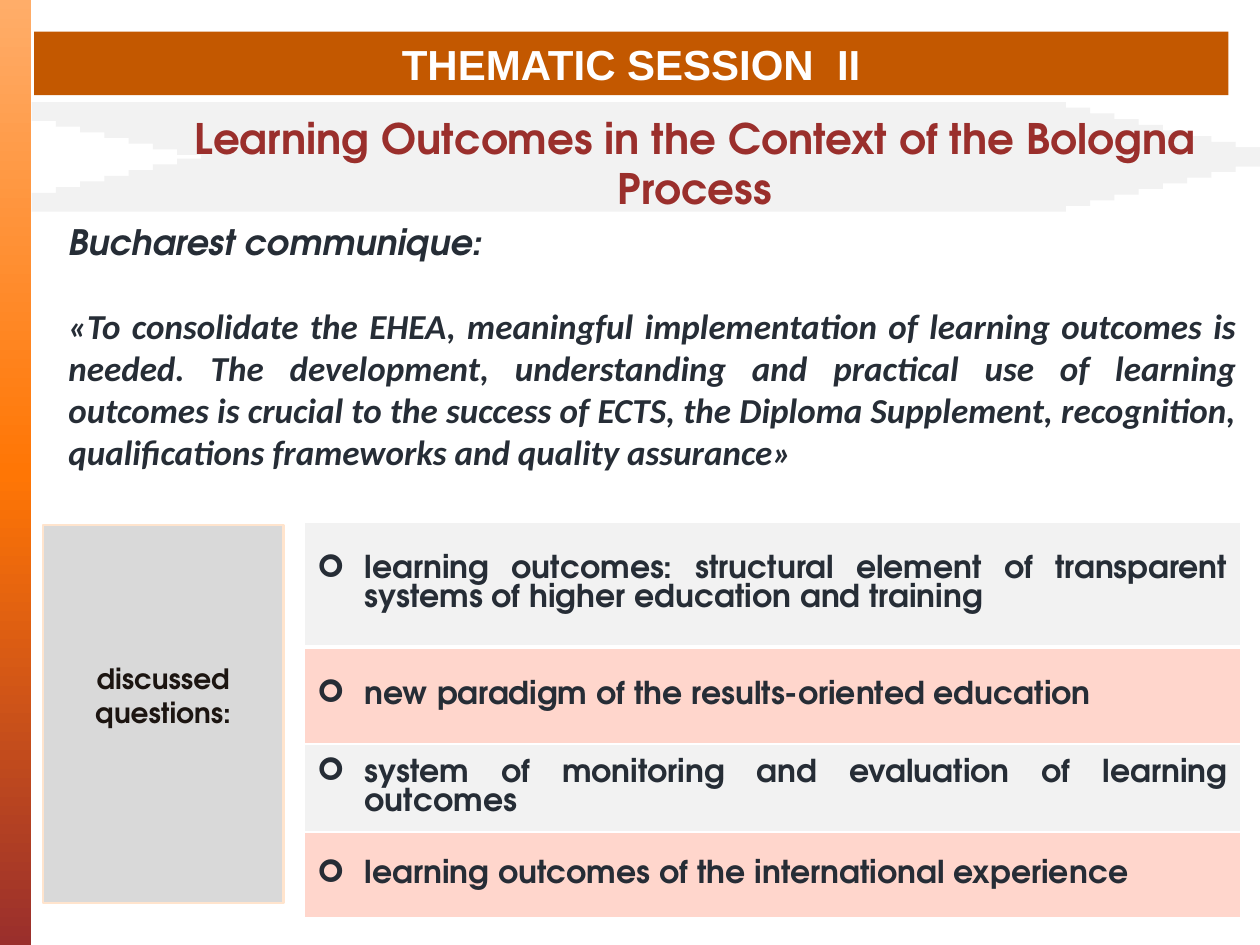
from copy import deepcopy
from dataclasses import dataclass

from lxml import etree
from pptx import Presentation, util as u
from pptx.dml.color import RGBColor
from pptx.enum import shapes, text
from pptx.oxml.ns import qn


@dataclass(frozen=True)
class Theme:
    display: str = "TeX Gyre Adventor"
    body: str = "Calibri"
    banner: str = "Arial"
    bullet: str = "Wingdings"
    white: str = "FFFFFF"
    orange: str = "C35800"
    red: str = "9A2F2C"
    ink: str = "262D36"
    label_ink: str = "1C1511"
    pale: str = "F2F2F2"
    pink: str = "FFD6CC"
    grey: str = "D9D9D9"
    peach: str = "FFE4CD"
    stripe: tuple = ((0, "FFAD69"), (0.5, "FF7605"), (1, "9A2F2C"))
    title_size: int = 24
    quote_size: int = 20
    item_size: int = 18
    label_size: int = 16


theme = Theme()
prs = Presentation()
prs.slide_width, prs.slide_height = u.Inches(10), u.Inches(7.5)
slide = prs.slides.add_slide(prs.slide_layouts[6])
COL, ROW = prs.slide_width / 40, prs.slide_height / 30


def block(col, row, cols, rows, color=None):
    """Add a rectangle in grid units, or a text box when no color is given."""
    area = [int(v) for v in (col * COL, row * ROW, cols * COL, rows * ROW)]
    if color is None:
        shape = slide.shapes.add_textbox(*area)
    else:
        shape = slide.shapes.add_shape(shapes.MSO_SHAPE.RECTANGLE, *area)
        shape.shadow.inherit = False
        shape.fill.solid()
        shape.fill.fore_color.rgb = RGBColor.from_string(color)
        shape.line.fill.background()
    shape.text_frame.word_wrap = True
    return shape


def write(paragraph, words, face, size, color, align, italic=False):
    paragraph.text = words
    paragraph.alignment = align
    font = paragraph.font
    font.name, font.size, font.bold, font.italic = face, u.Pt(size), True, italic
    font.color.rgb = RGBColor.from_string(color)


CENTER, JUSTIFY = text.PP_ALIGN.CENTER, text.PP_ALIGN.JUSTIFY

# Gradient stripe along the left edge
stripe = block(0, 0, 1, 30, theme.orange)
stripe.fill.gradient()
stripe.fill.gradient_angle = 270
stop_list = stripe._element.spPr.find(qn("a:gradFill")).find(qn("a:gsLst"))
stop_list.insert(1, deepcopy(stop_list[0]))
for stop, (position, color) in zip(stripe.fill.gradient_stops, theme.stripe):
    stop.position = position
    stop.color.rgb = RGBColor.from_string(color)

# Session banner
banner = block(1.08, 1, 37.92, 2.02, theme.orange)
banner.text_frame.vertical_anchor = text.MSO_ANCHOR.MIDDLE
write(banner.text_frame.paragraphs[0], "THEMATIC SESSION  II", theme.banner,
      theme.title_size, theme.white, CENTER)

# Stepped arrow: bars close in from above and below towards the tip
for step in range(9):
    for top in (3.24 + 0.18 * step, 6.12 - 0.18 * step):
        block(1 + 0.77 * step, top, 32.84, 0.6, theme.pale)

title = block(4.1, 3.36, 35.92, 5.24)
write(title.text_frame.paragraphs[0],
      "Learning Outcomes in the Context of the Bologna Process",
      theme.display, theme.title_size, theme.red, CENTER)

# Communique quotation
communique = block(1.78, 6.8, 37.88, 9.84).text_frame
source = communique.paragraphs[0]
write(source, "Bucharest communique:", theme.display, theme.quote_size,
      theme.ink, JUSTIFY, italic=True)
source.space_after = u.Pt(24)
write(communique.add_paragraph(),
      "«To consolidate the EHEA, meaningful implementation of learning outcomes is "
      "needed. The development, understanding and practical use of learning outcomes "
      "is crucial to the success of ECTS, the Diploma Supplement, recognition, "
      "qualifications frameworks and quality assurance»",
      theme.body, theme.quote_size, theme.ink, JUSTIFY, italic=True)

# Discussed questions, one table row each: words and height in grid rows
questions = [
    ("learning outcomes: structural element of transparent systems of higher "
     "education and training", 3.96),
    ("new paradigm of the results-oriented education", 3.08),
    ("system of monitoring and evaluation of learning outcomes", 2.8),
    ("learning outcomes of the international experience", 2.72),
]
table = slide.shapes.add_table(
    len(questions), 1, int(9.66 * COL), int(16.58 * ROW), int(29.72 * COL),
    int(sum(rows for _, rows in questions) * ROW)).table
table.first_row = table.horz_banding = False
for index, (question, rows) in enumerate(questions):
    table.rows[index].height = int(rows * ROW)
    cell = table.cell(index, 0)
    cell.vertical_anchor = text.MSO_ANCHOR.MIDDLE
    cell.fill.solid()
    cell.fill.fore_color.rgb = RGBColor.from_string((theme.pale, theme.pink)[index % 2])
    paragraph = cell.text_frame.paragraphs[0]
    write(paragraph, question, theme.display, theme.item_size, theme.ink, JUSTIFY)

    properties = paragraph._p.get_or_add_pPr()
    indent = u.Inches(0.38)
    properties.set("marL", str(indent))
    properties.set("indent", str(-indent))
    run_defaults = properties.find(qn("a:defRPr"))
    run_defaults.addprevious(etree.Element(qn("a:buFont"), typeface=theme.bullet))
    run_defaults.addprevious(etree.Element(qn("a:buChar"), char="➢"))

    for order, side in enumerate("LRTB"):
        heavy = (index, side) in ((0, "B"), (1, "T"))
        border = etree.Element(qn(f"a:ln{side}"), w=str(u.Pt(3 if heavy else 1)))
        paint = etree.SubElement(border, qn("a:solidFill"))
        etree.SubElement(paint, qn("a:srgbClr"), val=theme.white)
        cell._tc.tcPr.insert(order, border)

# Label beside the table, set a little above the middle
label = block(1.36, 16.68, 7.64, 12, theme.grey)
label.line.color.rgb = RGBColor.from_string(theme.peach)
label.line.width = u.Pt(1.25)
label.text_frame.vertical_anchor = text.MSO_ANCHOR.MIDDLE
label.text_frame.margin_bottom = int(1.4 * ROW)
write(label.text_frame.paragraphs[0], "discussed questions:", theme.display,
      theme.label_size, theme.label_ink, CENTER)

prs.save("out.pptx")
